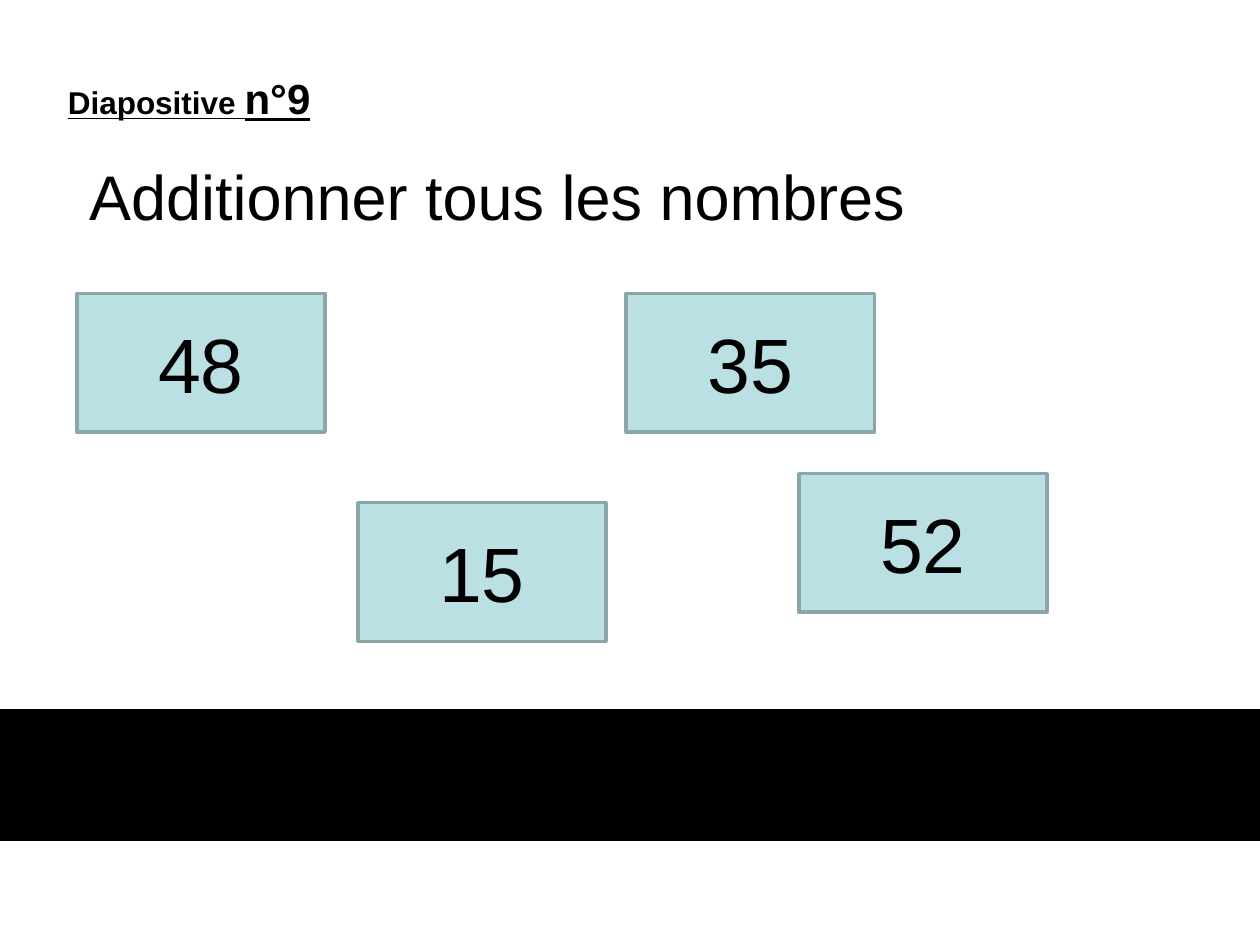
from pptx import Presentation
from pptx.dml.color import RGBColor
from pptx.enum.shapes import MSO_SHAPE
from pptx.enum.text import MSO_ANCHOR, MSO_AUTO_SIZE, PP_ALIGN
from pptx.util import Inches, Pt

RECTANGLE = MSO_SHAPE.RECTANGLE
MIDDLE = MSO_ANCHOR.MIDDLE
FIT_SHAPE = MSO_AUTO_SIZE.SHAPE_TO_FIT_TEXT
CENTER = PP_ALIGN.CENTER

BLACK = RGBColor(0x00, 0x00, 0x00)
CARD_FILL = RGBColor(0xBB, 0xE0, 0xE3)
CARD_LINE = RGBColor(0x8A, 0xA6, 0xA8)

FONT = "Arial"
CARD_WIDTH, CARD_HEIGHT = 1.97, 1.1
CARDS = [("48", 0.61, 2.33), ("35", 4.97, 2.33), ("15", 2.84, 3.99), ("52", 6.34, 3.76)]


def format_run(r, size, emphasis=False):
    """Apply the slide font, with bold underlining for emphasis."""
    r.font.name = FONT
    r.font.size = Pt(size)
    r.font.color.rgb = BLACK
    r.font.bold = emphasis
    r.font.underline = emphasis


def add_box(slide, left, top, width, height, fill, line):
    """Add a filled and outlined rectangle."""
    sp = slide.shapes.add_shape(
        RECTANGLE, Inches(left), Inches(top), Inches(width), Inches(height))
    sp.shadow.inherit = False
    sp.fill.solid()
    sp.fill.fore_color.rgb = fill
    sp.line.color.rgb = line
    sp.line.width = Pt(2)
    return sp


def add_text(slide, left, top, width, height, parts, wrap, emphasis=False):
    """Add a one-line text box from (text, size) parts and return its paragraph."""
    sp = slide.shapes.add_textbox(
        Inches(left), Inches(top), Inches(width), Inches(height))
    tf = sp.text_frame
    tf.word_wrap = wrap
    tf.auto_size = FIT_SHAPE
    p = tf.paragraphs[0]
    for text, size in parts:
        r = p.add_run()
        r.text = text
        format_run(r, size, emphasis)
    return p


def add_number_card(slide, number, left, top):
    """Add a card with a large centred number."""
    sp = add_box(slide, left, top, CARD_WIDTH, CARD_HEIGHT, CARD_FILL, CARD_LINE)
    tf = sp.text_frame
    tf.text = number
    tf.vertical_anchor = MIDDLE
    p = tf.paragraphs[0]
    p.alignment = CENTER
    format_run(p.runs[0], 44)


def main():
    """Build the addition exercise slide."""
    prs = Presentation()
    prs.slide_width, prs.slide_height = Inches(10), Inches(7.5)
    slide = prs.slides.add_slide(prs.slide_layouts[6])
    add_box(slide, 0, 5.64, 10, 1.02, BLACK, BLACK)
    p = add_text(slide, 0.44, 0.53, 4.8, 0.51,
                 [("Diapositive ", 18), ("n°9", 24)], wrap=True, emphasis=True)
    p.space_before = Pt(3)
    for number, left, top in CARDS:
        add_number_card(slide, number, left, top)
    add_text(slide, 0.61, 1.2, 6.74, 0.71,
             [("Additionner tous les nombres", 36)], wrap=False)
    prs.save("out.pptx")


if __name__ == "__main__":
    main()
